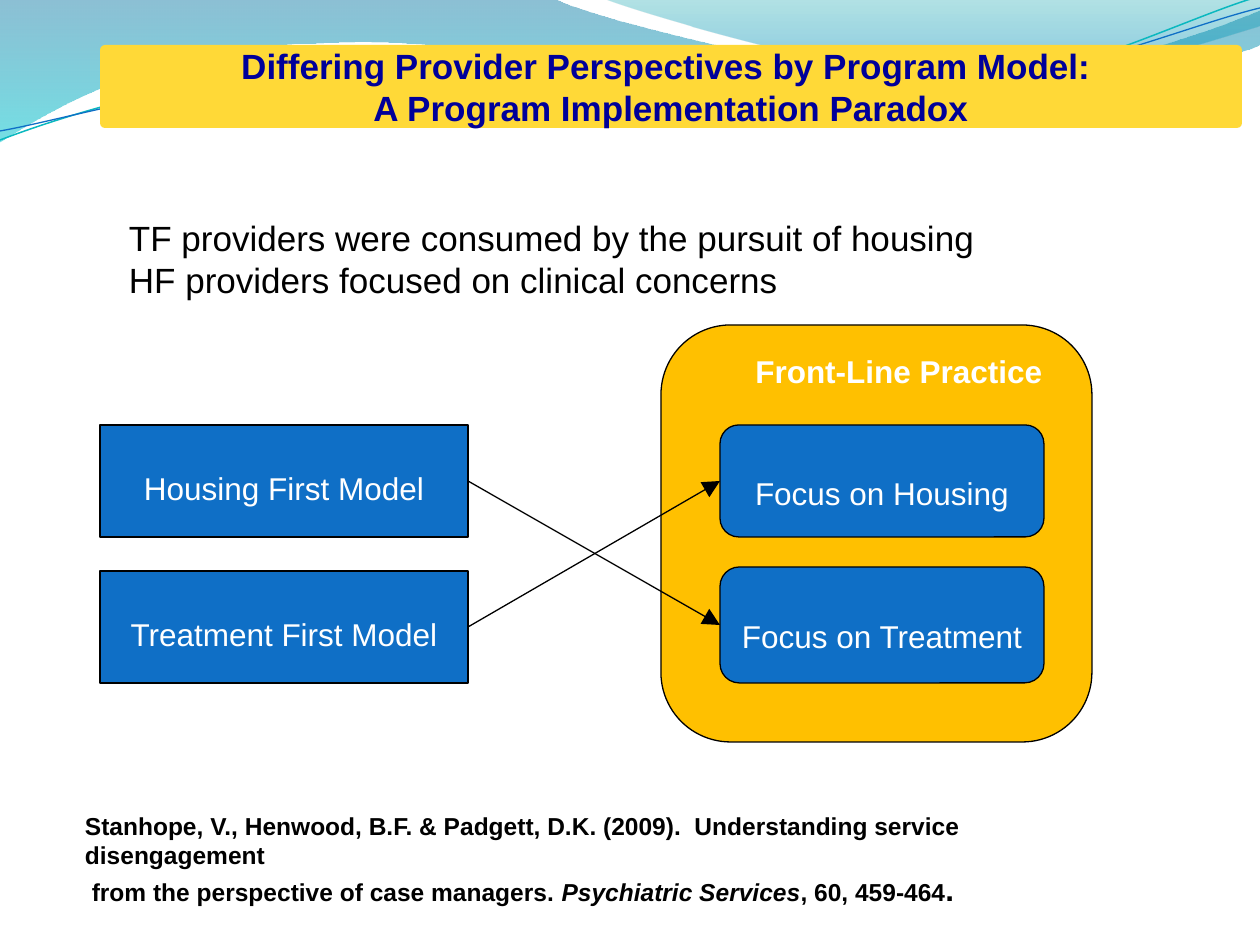
from lxml import etree
from pptx import Presentation
from pptx.dml.color import RGBColor
from pptx.enum.shapes import MSO_CONNECTOR as Connector, MSO_SHAPE as Shape
from pptx.enum.text import MSO_ANCHOR as Anchor, PP_ALIGN as Align
from pptx.oxml.ns import qn
from pptx.util import Pt

BLACK = RGBColor(0x00, 0x00, 0x00)
WHITE = RGBColor(0xFF, 0xFF, 0xFF)
NAVY = RGBColor(0x00, 0x00, 0x99)
BLUE = RGBColor(0x0F, 0x6F, 0xC6)
TEAL = RGBColor(0x0A, 0xB8, 0xBF)
AMBER = RGBColor(0xFF, 0xC0, 0x00)
YELLOW = RGBColor(0xFF, 0xD9, 0x37)
DEEP_BLUE = RGBColor(0x00, 0x74, 0xA1)
CYAN = RGBColor(0x00, 0xC6, 0xCF)
SEA_GREEN = RGBColor(0x00, 0xA1, 0xA9)
SKY_BLUE = RGBColor(0x00, 0x8B, 0xBF)

PX_PER_INCH = 126

LEFT_WAVE = [
    (0, 0), (554, -1),
    (600, 21, 837, 79, 955, 79), (1075, 79, 1207, 33, 1260, 11),
    (1261, 45),
    (1239, 55, 1096, 96, 940, 94), (784, 94, 481, 35, 324, 43),
    (163, 45, 58, 105, -1, 142),
]
RIGHT_WAVE = [
    (604, -1),
    (641, 14, 859, 78, 969, 82), (1079, 87, 1211, 40, 1260, 26),
    (1260, 0),
]
TEAL_STRAND = [
    (0, 140),
    (60, 117, 199, 72, 349, 66), (498, 59, 747, 112, 898, 101),
    (1050, 89, 1182, 19, 1257, -3),
]
BLUE_STRAND = [
    (0, 131),
    (59, 121, 207, 77, 357, 71), (508, 64, 752, 106, 903, 94),
    (1053, 84, 1185, 26, 1260, 8),
]


def px(length):
    return round(length * 914400 / PX_PER_INCH)


def bend(segment, controls, left, top):
    segment.tag = qn("a:cubicBezTo")
    for index in (0, 1):
        x, y = controls[2 * index:2 * index + 2]
        point = etree.Element(qn("a:pt"), x=str(px(x) - left), y=str(px(y) - top))
        segment.insert(index, point)


def add_curve(page, outline, closed):
    knots = [(px(part[-2]), px(part[-1])) for part in outline]
    builder = page.shapes.build_freeform(*knots[0])
    builder.add_line_segments(knots[1:], close=closed)
    curve = builder.convert_to_shape()
    curve.shadow.inherit = False
    segments = list(curve.element.spPr.iter(qn("a:lnTo")))
    for segment, part in zip(segments, outline[1:]):
        if len(part) == 6:
            bend(segment, part[:4], curve.left, curve.top)
    return curve


def add_wave(page, outline, stops):
    wave = add_curve(page, outline, True)
    wave.line.fill.background()
    wave.fill.gradient()
    wave.fill.gradient_angle = 270
    for stop, (position, color, opacity) in zip(wave.fill.gradient_stops, stops):
        stop.position = position
        stop.color.rgb = color
    colors = wave.element.spPr.iter(qn("a:srgbClr"))
    for node, (position, color, opacity) in zip(colors, stops):
        etree.SubElement(node, qn("a:alpha")).set("val", str(opacity * 1000))


def add_strand(page, outline, color, width):
    strand = add_curve(page, outline, False)
    strand.fill.background()
    strand.line.color.rgb = color
    strand.line.width = Pt(width)


def add_box(page, kind, left, top, width, height, fill, line=BLACK, corner=0.167):
    box = page.shapes.add_shape(kind, px(left), px(top), px(width), px(height))
    box.shadow.inherit = False
    box.fill.solid()
    box.fill.fore_color.rgb = fill
    if line is None:
        box.line.fill.background()
    else:
        box.line.color.rgb = line
        box.line.width = Pt(0.75)
    if kind == Shape.ROUNDED_RECTANGLE:
        box.adjustments[0] = corner
    return box


def write(box, *lines, size=18, color=WHITE, bold=False, align=Align.LEFT,
          anchor=Anchor.TOP, insets=(13, 6, 13, 6)):
    frame = box.text_frame
    frame.word_wrap = True
    frame.vertical_anchor = anchor
    (frame.margin_left, frame.margin_top,
     frame.margin_right, frame.margin_bottom) = map(px, insets)
    for index, line in enumerate(lines):
        para = frame.add_paragraph() if index else frame.paragraphs[0]
        para.alignment = align
        for text, changes in [(line, {})] if isinstance(line, str) else line:
            span = para.add_run()
            span.text = text
            span.font.name = "Arial"
            span.font.size = Pt(changes.get("size", size))
            span.font.bold = bold
            span.font.italic = changes.get("italic", False)
            span.font.color.rgb = color


def add_text(page, left, top, width, height, *lines, **style):
    box = page.shapes.add_textbox(px(left), px(top), px(width), px(height))
    write(box, *lines, color=BLACK, **style)


def add_label_box(page, kind, text, *place):
    box = add_box(page, kind, *place, BLUE)
    write(box, text, align=Align.CENTER, insets=(13, 44, 13, 6))
    return box


def add_arrow(page, source, target):
    arrow = page.shapes.add_connector(Connector.STRAIGHT, 0, 0, 0, 0)
    arrow.begin_connect(source, 3)
    arrow.end_connect(target, 1)
    arrow.line.color.rgb = BLACK
    arrow.line.width = Pt(0.75)
    line = arrow.line._get_or_add_ln()
    etree.SubElement(line, qn("a:tailEnd"), type="triangle", w="lg", len="lg")
    etree.SubElement(arrow.element.spPr, qn("a:effectLst"))


def add_backdrop(page):
    add_wave(page, LEFT_WAVE, [(0, DEEP_BLUE, 45), (1, CYAN, 55)])
    add_wave(page, RIGHT_WAVE, [(0, SEA_GREEN, 30), (0.8, SKY_BLUE, 45)])
    add_strand(page, TEAL_STRAND, TEAL, 0.85)
    add_strand(page, BLUE_STRAND, BLUE, 0.75)


def add_diagram(page):
    practice = add_box(page, Shape.ROUNDED_RECTANGLE, 661, 325, 431, 417, AMBER)
    write(practice, "Front-Line Practice", bold=True, insets=(74, 7, 13, 6))
    housing_model = add_label_box(
        page, Shape.RECTANGLE, "Housing First Model", 100, 425, 368, 112)
    treatment_model = add_label_box(
        page, Shape.RECTANGLE, "Treatment First Model", 100, 571, 368, 112)
    housing_focus = add_label_box(
        page, Shape.ROUNDED_RECTANGLE, "Focus on Housing", 720, 425, 324, 112)
    treatment_focus = add_label_box(
        page, Shape.ROUNDED_RECTANGLE, "Focus on Treatment", 720, 567, 324, 116)
    add_arrow(page, housing_model, treatment_focus)
    add_arrow(page, treatment_model, housing_focus)


def main():
    deck = Presentation()
    deck.slide_width, deck.slide_height = px(1260), px(945)
    page = deck.slides.add_slide(deck.slide_layouts[6])
    add_backdrop(page)
    title = add_box(page, Shape.ROUNDED_RECTANGLE, 100, 45, 1142, 83, YELLOW,
                    line=None, corner=0.06)
    write(title, "Differing Provider Perspectives by Program Model: ",
          "A Program Implementation Paradox", size=20, color=NAVY, bold=True,
          align=Align.CENTER, anchor=Anchor.MIDDLE, insets=(0, 1, 0, 0))
    add_text(page, 116, 211, 895, 100,
             "TF providers were consumed by the pursuit of housing",
             "HF providers focused on clinical concerns", size=20)
    add_diagram(page)
    add_text(page, 72, 805, 1002, 81,
             "Stanhope, V., Henwood, B.F. & Padgett, D.K. (2009).  "
             "Understanding service disengagement",
             [(" from the perspective of case managers. ", {}),
              ("Psychiatric Services", {"italic": True}),
              (", 60, 459-464", {}), (".", {"size": 18})],
             size=14, bold=True)
    deck.save("out.pptx")


if __name__ == "__main__":
    main()
